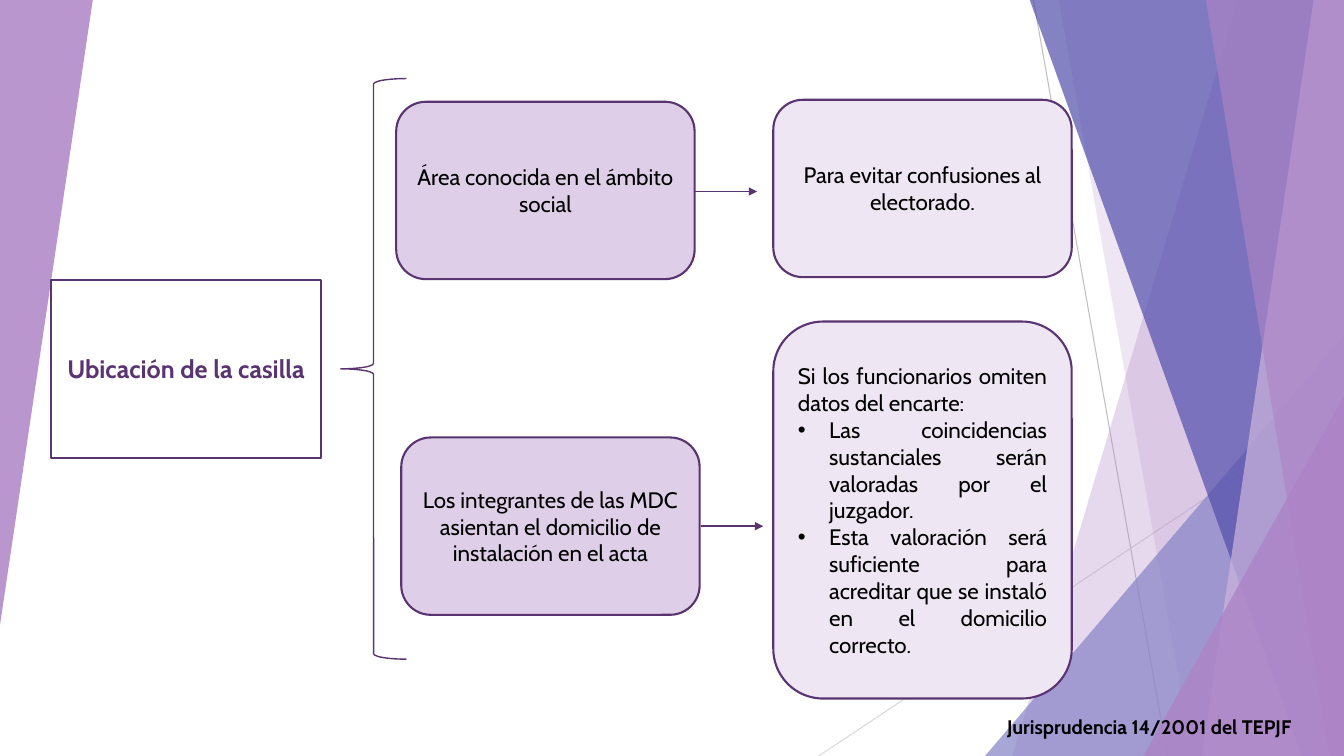
from dataclasses import dataclass
from typing import Any

from lxml import etree
from pptx import Presentation
from pptx.dml.color import RGBColor
from pptx.enum.shapes import MSO_CONNECTOR, MSO_SHAPE
from pptx.enum.text import MSO_ANCHOR, MSO_AUTO_SIZE, PP_ALIGN
from pptx.oxml import parse_xml
from pptx.oxml.ns import nsdecls, qn
from pptx.util import Pt

PX = 9144  # EMU per px, 100 px to the inch
SLIDE_WIDTH, SLIDE_HEIGHT = 1333, 750
BLEED_TOP = -1
BULLET_INDENT = 31
TITLE_AND_CONTENT = 1

STRAIGHT = MSO_CONNECTOR.STRAIGHT
TRIANGLE = MSO_SHAPE.ISOSCELES_TRIANGLE
ROUNDED = MSO_SHAPE.ROUNDED_RECTANGLE
LEFT_BRACE = MSO_SHAPE.LEFT_BRACE
CENTER, JUSTIFY, LEFT = PP_ALIGN.CENTER, PP_ALIGN.JUSTIFY, PP_ALIGN.LEFT
MIDDLE, TOP = MSO_ANCHOR.MIDDLE, MSO_ANCHOR.TOP
NO_AUTOFIT = MSO_AUTO_SIZE.NONE


@dataclass(frozen=True)
class Theme:
    font: str = "Cabin"
    plum: str = "5A3471"
    white: str = "FFFFFF"
    black: str = "000000"
    cause: str = "DECEE8"
    effect: str = "EFE6F4"
    orchid: str = "AD84C6"
    lilac: str = "CEB5DD"
    periwinkle: str = "8784C7"
    indigo: str = "524EAB"
    guide_dark: str = "BFBFBF"
    guide_light: str = "D9D9D9"
    title_size: int = 18
    body_size: int = 16
    source_size: int = 14
    card_line: float = 1.5
    link_line: float = 1
    guide_line: float = 0.75


THEME = Theme()


@dataclass(frozen=True)
class Box:
    left: int
    top: int
    width: int
    height: int


@dataclass(frozen=True)
class Band:
    """Runs from its slanted left edge to the right edge of the slide."""
    top_x: int
    bottom_x: int
    color: str
    opacity: int


@dataclass(frozen=True)
class Wedge:
    box: Box
    color: str
    opacity: int
    rotation: int = 0


@dataclass(frozen=True)
class Segment:
    start: tuple[int, int]
    end: tuple[int, int]
    color: str
    width: float
    arrow: bool = False


@dataclass(frozen=True)
class Card:
    box: Box
    fill: str
    text: str


GUIDES = (
    Segment((1025, 0), (1158, 750), THEME.guide_dark, THEME.guide_line),
    Segment((1333, 403), (812, 750), THEME.guide_light, THEME.guide_line),
)
FACETS = (
    Band(1228, 1004, THEME.orchid, 30),
    Band(1050, 1183, THEME.orchid, 20),
    Wedge(Box(977, 333, 356, 417), THEME.periwinkle, 72),
    Band(1021, 1291, THEME.indigo, 70),
    Band(1303, 1192, THEME.lilac, 70),
    Band(1196, 1318, THEME.orchid, 65),
    Wedge(Box(1134, 393, 199, 357), THEME.orchid, 80),
    Wedge(Box(0, 0, 92, 620), THEME.orchid, 85, 180),
)
TOPIC_BOX = Box(51, 278, 267, 176)
TOPIC = "Ubicación de la casilla"
CARDS = (
    Card(Box(398, 434, 296, 176), THEME.cause,
         "Los integrantes de las MDC asientan el domicilio de instalación en el acta"),
    Card(Box(393, 101, 296, 176), THEME.cause, "Área conocida en el ámbito social"),
    Card(Box(767, 99, 296, 176), THEME.effect, "Para evitar confusiones al electorado."),
)
OMISSION_BOX = Box(767, 319, 296, 374)
OMISSION_LEAD = "Si los funcionarios omiten datos del encarte:"
OMISSION_RULES = (
    "Las coincidencias sustanciales serán valoradas por el juzgador.",
    "Esta valoración será suficiente para acreditar que se instaló en el domicilio correcto.",
)
BRACE_BOX = Box(338, 78, 65, 576)
ARROWS = (
    Segment((689, 190), (751, 190), THEME.plum, THEME.link_line, True),
    Segment((695, 522), (757, 522), THEME.plum, THEME.link_line, True),
)
SOURCE_BOX = Box(989, 704, 344, 34)
SOURCE = "Jurisprudencia 14/2001 del TEPJF"


def apply_formats(target: Any, formats: dict[str, Any]) -> None:
    for name, value in formats.items():
        setattr(target, name, value)


def emu(box: Box) -> tuple[int, ...]:
    return tuple(n * PX for n in (box.left, box.top, box.width, box.height))


def paint_facet(shape: Any, color: str, opacity: int) -> None:
    shape.shadow.inherit = False
    shape.fill.solid()
    shape.fill.fore_color.rgb = RGBColor.from_string(color)
    shape.line.fill.background()
    rgb = shape._element.spPr.find(".//" + qn("a:srgbClr"))
    etree.SubElement(rgb, qn("a:alpha"), val=str(opacity * 1000))


def draw_facet(shapes: Any, facet: Band | Wedge) -> None:
    if isinstance(facet, Band):
        outline = shapes.build_freeform(facet.top_x, BLEED_TOP, scale=PX)
        outline.add_line_segments([(SLIDE_WIDTH, BLEED_TOP), (SLIDE_WIDTH, SLIDE_HEIGHT),
                                   (facet.bottom_x, SLIDE_HEIGHT)])
        shape = outline.convert_to_shape()
    else:
        shape = shapes.add_shape(TRIANGLE, *emu(facet.box))
        shape.adjustments[0] = 1
        shape.rotation = facet.rotation
    paint_facet(shape, facet.color, facet.opacity)


def draw_segment(shapes: Any, segment: Segment) -> None:
    ends = (n * PX for n in segment.start + segment.end)
    connector = shapes.add_connector(STRAIGHT, *ends)
    connector.line.color.rgb = RGBColor.from_string(segment.color)
    connector.line.width = Pt(segment.width)
    if segment.arrow:
        etree.SubElement(connector.line._get_or_add_ln(), qn("a:tailEnd"), type="triangle")
    etree.SubElement(connector._element.spPr, qn("a:effectLst"))


def write(shape: Any, lines: tuple[str, ...], size: int, color: str, align: Any,
          anchor: Any = MIDDLE, bold: bool = False) -> None:
    frame = shape.text_frame
    frame.text = "\n".join(lines)
    apply_formats(frame, {"word_wrap": True, "auto_size": NO_AUTOFIT, "vertical_anchor": anchor})
    for paragraph in frame.paragraphs:
        apply_formats(paragraph, {"alignment": align, "space_before": Pt(0)})
        font = paragraph.runs[0].font
        apply_formats(font, {"name": THEME.font, "size": Pt(size), "bold": bold})
        font.color.rgb = RGBColor.from_string(color)


def style_card(shape: Any, fill: str) -> None:
    shape.shadow.inherit = False
    shape.fill.solid()
    shape.fill.fore_color.rgb = RGBColor.from_string(fill)
    shape.line.color.rgb = RGBColor.from_string(THEME.plum)
    shape.line.width = Pt(THEME.card_line)


def placeholder_to_card(shapes: Any, placeholder: Any, box: Box, fill: str) -> None:
    """Moves a placeholder in front of the backdrop and rounds its corners."""
    shapes._spTree.append(placeholder._element)
    apply_formats(placeholder, dict(zip(("left", "top", "width", "height"), emu(box))))
    placeholder._element.spPr.append(parse_xml(
        f'<a:prstGeom {nsdecls("a")} prst="roundRect"><a:avLst/></a:prstGeom>'))
    style_card(placeholder, fill)


def set_bullet(paragraph: Any, bulleted: bool) -> None:
    indent = BULLET_INDENT * PX if bulleted else 0
    properties = paragraph._p.get_or_add_pPr()
    properties.set("marL", str(indent))
    properties.set("indent", str(-indent))
    if bulleted:
        etree.SubElement(properties, qn("a:buFont"), typeface="Arial")
        etree.SubElement(properties, qn("a:buChar"), char="•")
    else:
        etree.SubElement(properties, qn("a:buNone"))


def main() -> None:
    deck = Presentation()
    apply_formats(deck, {"slide_width": SLIDE_WIDTH * PX, "slide_height": SLIDE_HEIGHT * PX})
    slide = deck.slides.add_slide(deck.slide_layouts[TITLE_AND_CONTENT])
    shapes = slide.shapes
    topic, omission = shapes.title, slide.placeholders[1]

    for guide in GUIDES:
        draw_segment(shapes, guide)
    for facet in FACETS:
        draw_facet(shapes, facet)

    placeholder_to_card(shapes, topic, TOPIC_BOX, THEME.white)
    write(topic, (TOPIC,), THEME.title_size, THEME.plum, CENTER, bold=True)
    for card in CARDS:
        shape = shapes.add_shape(ROUNDED, *emu(card.box))
        style_card(shape, card.fill)
        write(shape, (card.text,), THEME.body_size, THEME.black, CENTER)

    placeholder_to_card(shapes, omission, OMISSION_BOX, THEME.effect)
    write(omission, (OMISSION_LEAD, *OMISSION_RULES), THEME.body_size, THEME.black, JUSTIFY)
    for index, paragraph in enumerate(omission.text_frame.paragraphs):
        set_bullet(paragraph, bulleted=index > 0)

    brace = shapes.add_shape(LEFT_BRACE, *emu(BRACE_BOX))
    brace.shadow.inherit = False
    brace.fill.background()
    brace.line.color.rgb = RGBColor.from_string(THEME.plum)
    brace.line.width = Pt(THEME.link_line)
    for arrow in ARROWS:
        draw_segment(shapes, arrow)

    source = shapes.add_textbox(*emu(SOURCE_BOX))
    write(source, (SOURCE,), THEME.source_size, THEME.black, LEFT, TOP, bold=True)
    deck.save("out.pptx")


if __name__ == "__main__":
    main()
